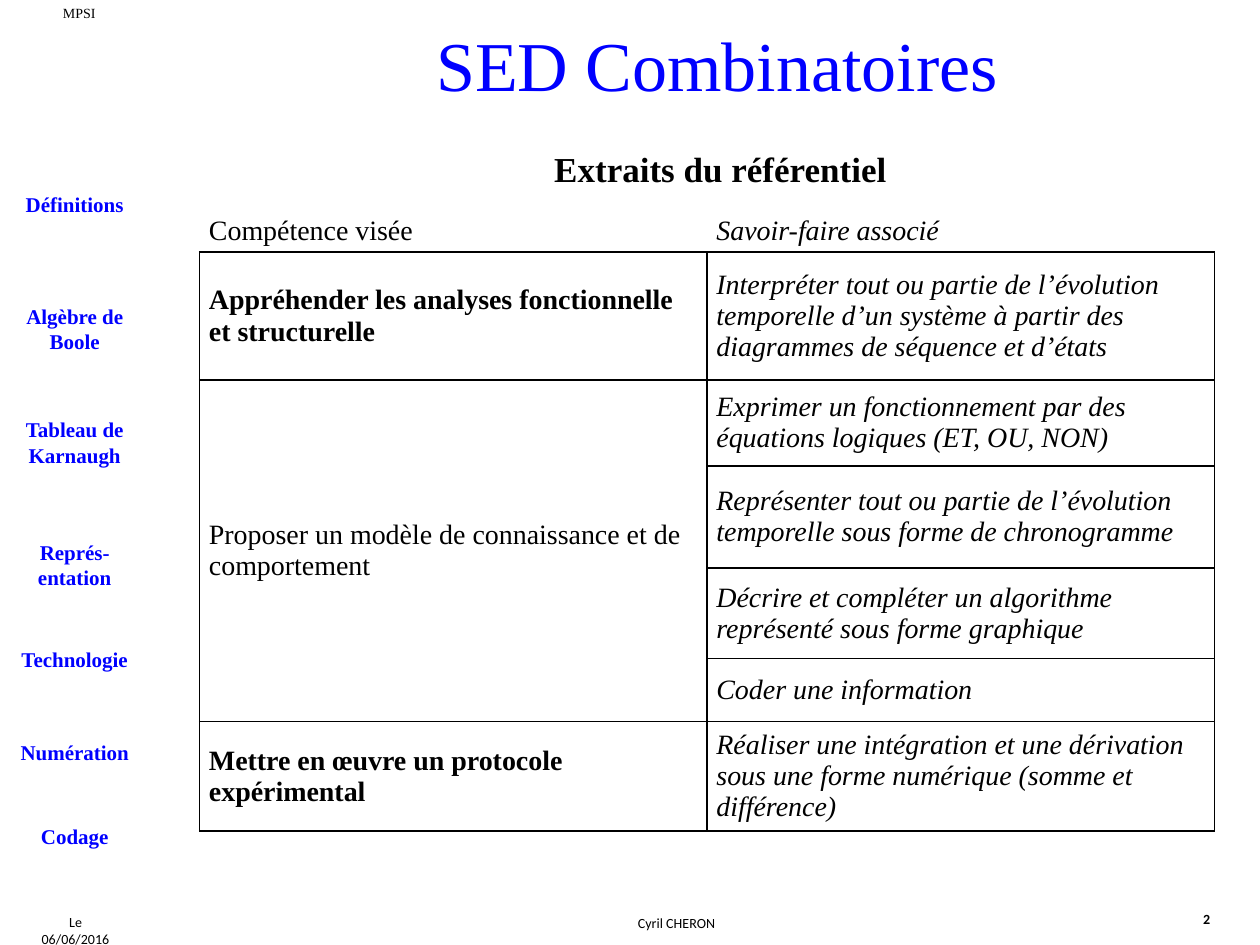
from dataclasses import dataclass

from lxml.etree import SubElement
from pptx import Presentation
from pptx.dml.color import RGBColor
from pptx.enum.shapes import MSO_SHAPE
from pptx.enum.text import MSO_ANCHOR, PP_ALIGN
from pptx.oxml.ns import qn
from pptx.util import Pt


@dataclass(frozen=True)
class Theme:
    black: str = "000000"
    white: str = "FFFFFF"
    blue: str = "0000FF"
    serif: str = "Times New Roman"
    sans: str = "Calibri"
    title: int = 40
    heading: int = 20
    body: int = 16
    menu: int = 12
    small: int = 8


THEME = Theme()

MENU = [
    ("Définitions", 105.8),
    ("Algèbre de Boole", 170),
    ("Tableau de Karnaugh", 234.7),
    ("Représ-entation", 304.6),
    ("Technologie", 365.8),
    ("Numération", 419),
    ("Codage", 467.3),
]

# Each skill, whether it is bold, and the abilities that go with it
SKILLS = [
    ("Appréhender les analyses fonctionnelle et structurelle", True, [
        "Interpréter tout ou partie de l’évolution temporelle d’un système "
        "à partir des diagrammes de séquence et d’états"]),
    ("Proposer un modèle de connaissance et de comportement", False, [
        "Exprimer un fonctionnement par des équations logiques (ET, OU, NON)",
        "Représenter tout ou partie de l’évolution temporelle sous forme de chronogramme",
        "Décrire et compléter un algorithme représenté sous forme graphique",
        "Coder une information"]),
    ("Mettre en œuvre un protocole expérimental", True, [
        "Réaliser une intégration et une dérivation sous une forme numérique "
        "(somme et différence)"]),
]
ROW_HEIGHTS = [24.5, 73.2, 49, 58.5, 51.6, 36, 62.6]


def write(frame, text, size, color=THEME.black, font=THEME.serif,
          bold=False, italic=False, align=PP_ALIGN.LEFT):
    frame.text = text
    para = frame.paragraphs[0]
    para.alignment = align
    for span in para.runs:
        span.font.size = Pt(size)
        span.font.name = font
        span.font.bold = bold
        span.font.italic = italic
        span.font.color.rgb = RGBColor.from_string(color)


def add_text(page, area, text, size, wrap=True, side_inset=7.2, **style):
    box = page.shapes.add_textbox(*map(Pt, area))
    frame = box.text_frame
    frame.word_wrap = wrap
    frame.margin_left = frame.margin_right = Pt(side_inset)
    write(frame, text, size, **style)


def add_class_label(page):
    label = page.shapes.add_shape(MSO_SHAPE.RECTANGLE, Pt(23), Pt(2.9), Pt(44.6), Pt(9.4))
    label.shadow.inherit = False
    label.fill.solid()
    label.fill.fore_color.rgb = RGBColor.from_string(THEME.white)
    label.line.fill.background()
    frame = label.text_frame
    frame.margin_left = frame.margin_right = frame.margin_top = frame.margin_bottom = 0
    write(frame, "MPSI", THEME.small, align=PP_ALIGN.CENTER)


def add_menu(page):
    for text, top in MENU:
        add_text(page, (1, top, 83.5, 21.6), text, THEME.menu, side_inset=3,
                 color=THEME.blue, bold=True, align=PP_ALIGN.CENTER)


def set_borders(cell, outer, bottom):
    properties = cell._tc.get_or_add_tcPr()
    for tag, color in (("a:lnL", outer), ("a:lnR", outer), ("a:lnT", outer), ("a:lnB", bottom)):
        line = SubElement(properties, qn(tag), w=str(Pt(1)))
        fill = SubElement(line, qn("a:solidFill"))
        SubElement(fill, qn("a:srgbClr"), val=color)


def fill_cell(cell, text, **style):
    cell.vertical_anchor = MSO_ANCHOR.MIDDLE
    cell.margin_left = cell.margin_right = Pt(5.4)
    cell.margin_top = cell.margin_bottom = 0
    write(cell.text_frame, text, THEME.body, **style)


def add_skill_table(page):
    count = len(ROW_HEIGHTS)
    table = page.shapes.add_table(count, 2, Pt(114), Pt(119.5), Pt(580), Pt(sum(ROW_HEIGHTS))).table
    table.first_row = table.horz_banding = False
    for row, height in zip(table.rows, ROW_HEIGHTS):
        row.height = Pt(height)
    for index in range(count):
        for column in range(2):
            cell = table.cell(index, column)
            # The top edge of the first body row is the header's bottom edge
            set_borders(cell, THEME.black if index else THEME.white, THEME.black)
            cell.fill.background()

    fill_cell(table.cell(0, 0), "Compétence visée")
    fill_cell(table.cell(0, 1), "Savoir-faire associé", italic=True)
    first = 1
    for skill, bold, abilities in SKILLS:
        last = first + len(abilities) - 1
        if last > first:
            table.cell(first, 0).merge(table.cell(last, 0))
        fill_cell(table.cell(first, 0), skill, bold=bold)
        for index, ability in enumerate(abilities, first):
            fill_cell(table.cell(index, 1), ability, italic=True)
        first = last + 1


def add_footer(page):
    add_text(page, (12.2, 518.4, 62, 17.3), "Le 06/06/2016", THEME.small, wrap=False,
             font=THEME.sans, align=PP_ALIGN.CENTER)
    add_text(page, (90, 519, 593.3, 17.3), "Cyril CHERON", THEME.small,
             font=THEME.sans, align=PP_ALIGN.CENTER)
    add_text(page, (680.4, 517, 28, 17.3), "2", THEME.small, wrap=False,
             font=THEME.sans, bold=True)


def main():
    deck = Presentation()
    deck.slide_width, deck.slide_height = Pt(720), Pt(540)
    page = deck.slides.add_slide(deck.slide_layouts[6])
    add_footer(page)
    add_menu(page)
    add_class_label(page)
    add_text(page, (175, 8.6, 469.4, 55.4), "SED Combinatoires", THEME.title,
             color=THEME.blue, align=PP_ALIGN.CENTER)
    add_text(page, (309.6, 80.6, 206, 31.7), "Extraits du référentiel", THEME.heading,
             wrap=False, bold=True)
    add_skill_table(page)
    deck.save("out.pptx")


if __name__ == "__main__":
    main()
